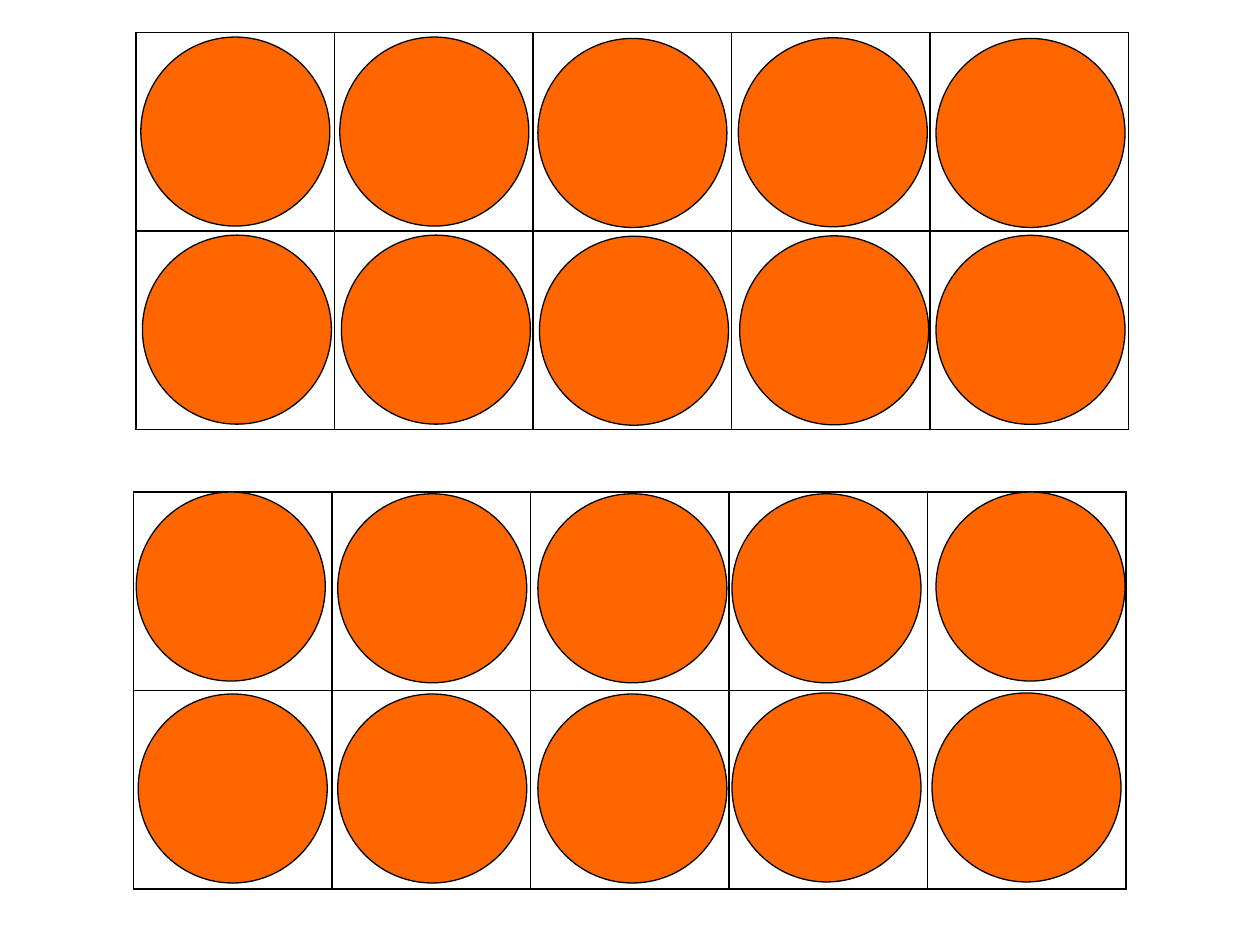
from dataclasses import dataclass

from lxml.etree import SubElement
from pptx import Presentation
from pptx.dml.color import RGBColor
from pptx.enum.shapes import MSO_SHAPE
from pptx.oxml.ns import qn
from pptx.slide import Slide
from pptx.table import _Cell
from pptx.util import Pt

COLORS = {"counter": "FF6600", "ink": "000000"}
COLUMNS, ROWS = 5, 2
CELL_SIZE = 113.4
COUNTER_SIZE = 108
GRID_WIDTH = 1
COUNTER_OUTLINE = 0.75


@dataclass(frozen=True)
class TenFrame:
    """A grid and the hand-placed (left, top) of its counters, in points."""
    left: float
    top: float
    counters: tuple[tuple[float, float], ...]


TEN_FRAMES = (
    TenFrame(77.8, 18.7, (
        (80.5, 21.2), (194.2, 21.2), (307.4, 22), (421.9, 21.6), (534.9, 22),
        (81.4, 134.4), (195.1, 134.4), (308.3, 135), (422.7, 134.8), (534.9, 134.5),
    )),
    TenFrame(76.4, 281.2, (
        (77.9, 281.2), (193, 282.2), (307.4, 282.2), (418.3, 282.2), (534.9, 281.2),
        (79, 396.6), (193, 396.6), (307.4, 396.6), (418.3, 396), (532.6, 396),
    )),
)


def outline_cell(cell: _Cell) -> None:
    properties = cell._tc.get_or_add_tcPr()
    for side in ("a:lnL", "a:lnR", "a:lnT", "a:lnB"):
        border = SubElement(properties, qn(side), w=str(Pt(GRID_WIDTH)))
        paint = SubElement(border, qn("a:solidFill"))
        SubElement(paint, qn("a:srgbClr"), val=COLORS["ink"])


def draw_grid(slide: Slide, frame: TenFrame) -> None:
    grid = slide.shapes.add_table(
        ROWS, COLUMNS, Pt(frame.left), Pt(frame.top),
        Pt(COLUMNS * CELL_SIZE), Pt(ROWS * CELL_SIZE),
    ).table
    grid.first_row = False
    grid.horz_banding = False
    for column in grid.columns:
        column.width = Pt(CELL_SIZE)
    for row in grid.rows:
        row.height = Pt(CELL_SIZE)
    for cell in grid.iter_cells():
        outline_cell(cell)
        cell.fill.background()


def draw_counter(slide: Slide, left: float, top: float) -> None:
    counter = slide.shapes.add_shape(
        MSO_SHAPE.OVAL, Pt(left), Pt(top), Pt(COUNTER_SIZE), Pt(COUNTER_SIZE)
    )
    counter.shadow.inherit = False
    counter.fill.solid()
    counter.fill.fore_color.rgb = RGBColor.from_string(COLORS["counter"])
    counter.line.color.rgb = RGBColor.from_string(COLORS["ink"])
    counter.line.width = Pt(COUNTER_OUTLINE)


def main() -> None:
    presentation = Presentation()
    presentation.slide_width, presentation.slide_height = Pt(720), Pt(540)
    slide = presentation.slides.add_slide(presentation.slide_layouts[6])
    for frame in TEN_FRAMES:
        draw_grid(slide, frame)
        for left, top in frame.counters:
            draw_counter(slide, left, top)
    presentation.save("out.pptx")


if __name__ == "__main__":
    main()
